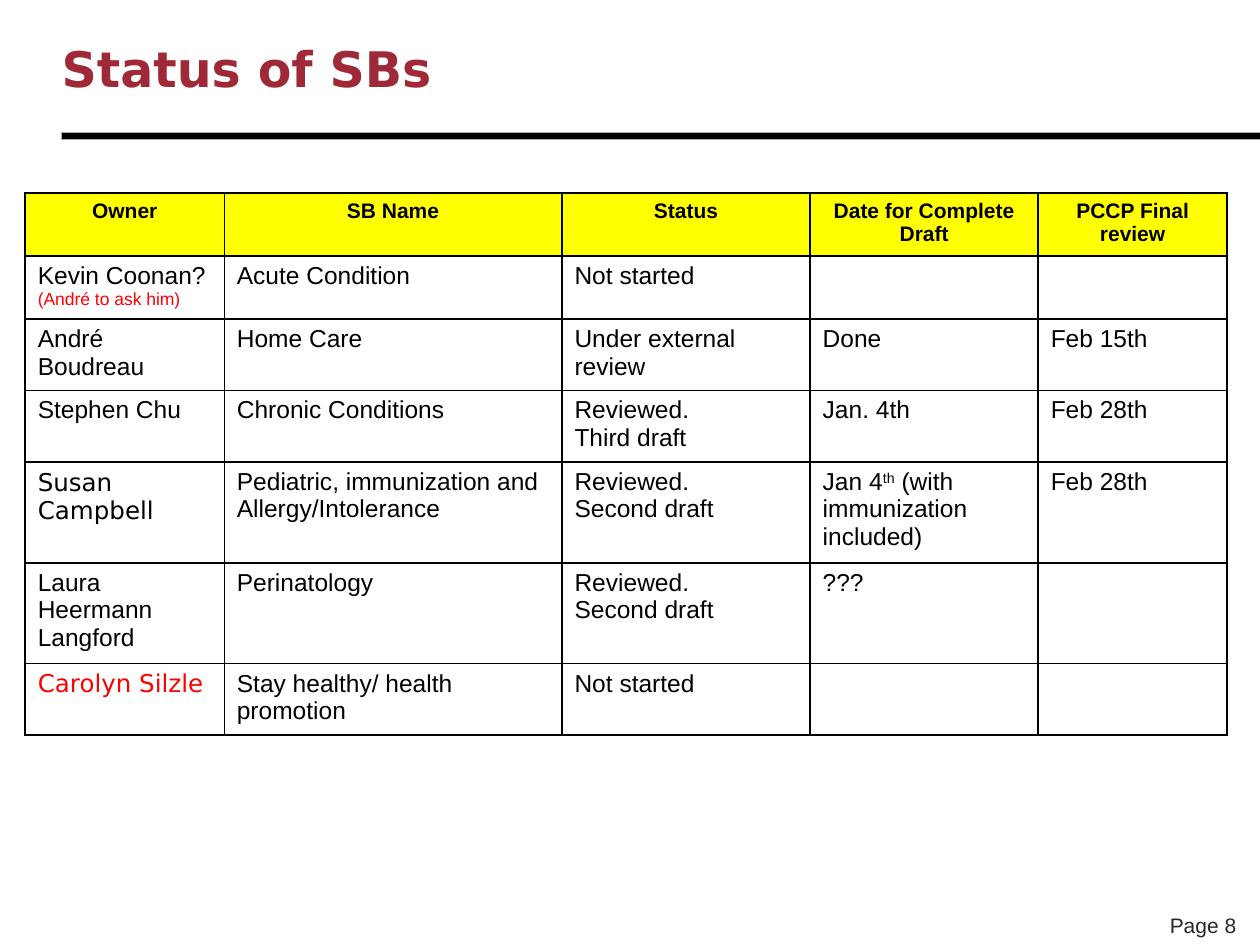
from lxml.etree import SubElement
from pptx import Presentation
from pptx.dml.color import RGBColor
from pptx.enum.shapes import MSO_SHAPE
from pptx.enum.text import MSO_ANCHOR, PP_ALIGN
from pptx.oxml.ns import qn
from pptx.util import Inches, Pt

COLORS = {
    "title": "9F2936",
    "black": "000000",
    "page": "292929",
    "rule_edge": "ADADAD",
    "header": "FFFF00",
    "alert": "FF0000",
}
BODY_FONT = "Arial"
ALT_FONT = "DejaVu Sans"
COLUMN_WIDTHS = [1.58, 2.68, 1.97, 1.81, 1.5]
ROW_HEIGHTS = [0.49, 0.33] + [0.56] * 5
HEADERS = ["Owner", "SB Name", "Status", "Date for Complete Draft", "PCCP Final review"]
ROWS = [
    [[("Kevin Coonan? ", {}), ("(André to ask him)", {"size": 10, "color": "alert"})],
     "Acute Condition", "Not started", "", ""],
    ["André Boudreau", "Home Care", "Under external review", "Done", "Feb 15th"],
    ["Stephen Chu", "Chronic Conditions", "Reviewed.\nThird draft", "Jan. 4th", "Feb 28th"],
    [[("Susan Campbell", {"font": ALT_FONT})],
     "Pediatric, immunization and Allergy/Intolerance", "Reviewed.\nSecond draft",
     [("Jan 4", {}), ("th", {"baseline": 30}), (" (with immunization included)", {})],
     "Feb 28th"],
    ["Laura Heermann Langford", "Perinatology", "Reviewed.\nSecond draft", "???", ""],
    [[("Carolyn Silzle", {"font": ALT_FONT, "color": "alert"})],
     "Stay healthy/ health promotion", "Not started", "", ""],
]


def rgb(name):
    """Return the named colour."""
    return RGBColor.from_string(COLORS[name])


def add_run(paragraph, text, size=14, font=BODY_FONT, color="black", bold=False, baseline=0):
    """Append one formatted run to a paragraph."""
    run = paragraph.add_run()
    run.text = text
    run.font.size = Pt(size)
    run.font.name = font
    run.font.bold = bold
    run.font.color.rgb = rgb(color)
    if baseline:
        run.font._element.set("baseline", str(baseline * 1000))


def write_text(frame, content, align=PP_ALIGN.LEFT, **style):
    """Write a string, one paragraph a line, or a list of styled runs."""
    lines = [[(line, {})] for line in content.split("\n")] if isinstance(content, str) else [content]
    for index, line in enumerate(lines):
        paragraph = frame.add_paragraph() if index else frame.paragraphs[0]
        paragraph.alignment = align
        for text, changes in line:
            if text:
                add_run(paragraph, text, **{**style, **changes})


def add_label(slide, box, text, anchor, margin=None, **style):
    """Add a wrapped text box."""
    frame = slide.shapes.add_textbox(*map(Inches, box)).text_frame
    frame.word_wrap = True
    frame.vertical_anchor = anchor
    if margin is not None:
        frame.margin_left = frame.margin_right = Inches(margin)
        frame.margin_top = frame.margin_bottom = Inches(margin)
    write_text(frame, text, **style)


def add_title_rule(slide):
    """Add the heavy rule below the title."""
    rule = slide.shapes.add_shape(
        MSO_SHAPE.RECTANGLE, Inches(0.49), Inches(1.05), Inches(9.52), Inches(0.06))
    rule.shadow.inherit = False
    rule.fill.solid()
    rule.fill.fore_color.rgb = rgb("black")
    rule.line.color.rgb = rgb("rule_edge")
    rule.line.width = Pt(0.75)


def add_borders(cell):
    """Draw a thin black line on each side of a cell."""
    properties = cell._tc.get_or_add_tcPr()
    for side in ("a:lnL", "a:lnR", "a:lnT", "a:lnB"):
        line = SubElement(properties, qn(side), w=str(Pt(1)))
        fill = SubElement(line, qn("a:solidFill"))
        SubElement(fill, qn("a:srgbClr"), val=COLORS["black"])


def fill_cell(cell, content, is_header):
    """Format and fill one table cell."""
    add_borders(cell)
    if is_header:
        cell.fill.solid()
        cell.fill.fore_color.rgb = rgb("header")
        write_text(cell.text_frame, content, align=PP_ALIGN.CENTER, size=12, bold=True)
    else:
        cell.fill.background()
        write_text(cell.text_frame, content)


def add_status_table(slide):
    """Add the table of owners, names, status and dates."""
    table = slide.shapes.add_table(
        len(ROW_HEIGHTS), len(COLUMN_WIDTHS), Inches(0.2), Inches(1.53),
        Inches(sum(COLUMN_WIDTHS)), Inches(sum(ROW_HEIGHTS))).table
    for column, width in zip(table.columns, COLUMN_WIDTHS):
        column.width = Inches(width)
    for row, height, contents in zip(table.rows, ROW_HEIGHTS, [HEADERS] + ROWS):
        row.height = Inches(height)
        for cell, content in zip(row.cells, contents):
            fill_cell(cell, content, contents is HEADERS)


def main():
    """Build and save the status slide."""
    deck = Presentation()
    deck.slide_width, deck.slide_height = Inches(10), Inches(7.5)
    slide = deck.slides.add_slide(deck.slide_layouts[6])
    add_label(slide, (8.82, 7.19, 1.09, 0.3), "Page 8", MSO_ANCHOR.BOTTOM,
              align=PP_ALIGN.RIGHT, size=12, color="page")
    add_title_rule(slide)
    add_label(slide, (0.49, 0.13, 8.5, 0.82), "Status of SBs", MSO_ANCHOR.MIDDLE,
              margin=0, size=28, font=ALT_FONT, color="title", bold=True)
    add_status_table(slide)
    deck.save("out.pptx")


if __name__ == "__main__":
    main()
